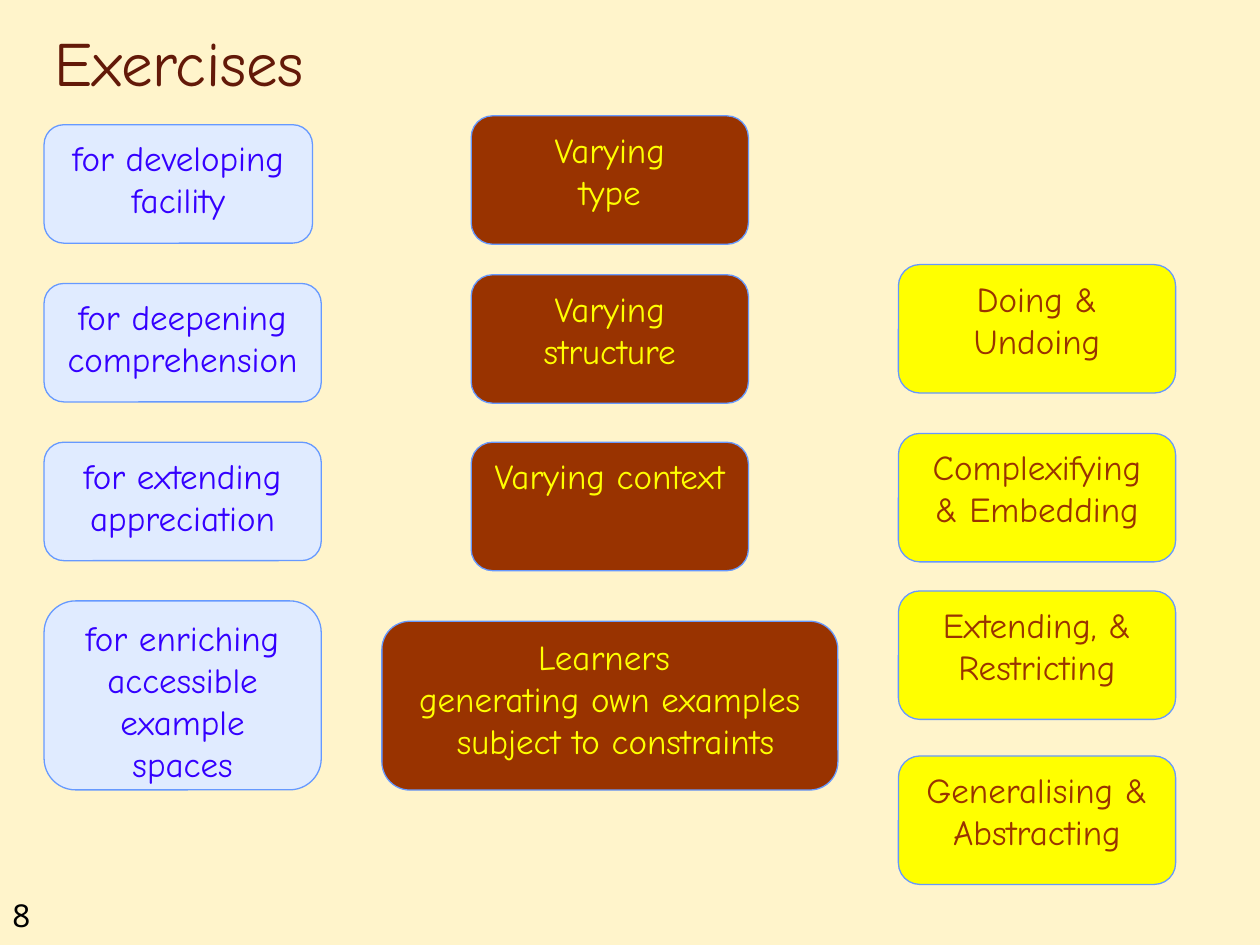
"""Build the Exercises slide: purposes, variations and themes as rounded cards."""
from typing import NamedTuple

from pptx import Presentation
from pptx.dml.color import RGBColor as RGB
from pptx.enum.shapes import MSO_SHAPE as Shape
from pptx.enum.text import MSO_ANCHOR as Anchor, PP_ALIGN as Align
from pptx.util import Pt

COLORS = {
    "background": "FFF4CB", "title": "631908", "number": "000000", "outline": "6699FF",
    "pale": "E0EBFF", "violet": "3400FF", "brown": "993300", "yellow": "FFFF00",
}
FONT = "Comic Neue"
CARD_W = 158.4


class Style(NamedTuple):
    fill: str
    ink: str


class Card(NamedTuple):
    top: float
    height: float
    paragraphs: tuple[str, ...]
    width: float = CARD_W


class Column(NamedTuple):
    center: float
    style: Style
    cards: tuple[Card, ...]


PURPOSE_H, CARD_H = 67.7, 73.4
COLUMNS = (
    Column(104.4, Style("pale", "violet"), (
        Card(71.3, PURPOSE_H, ("for developing facility",), 153.4),
        Card(162, PURPOSE_H, ("for deepening comprehension",)),
        Card(252.7, PURPOSE_H, ("for extending appreciation",)),
        Card(343.4, 108, ("for enriching accessible example spaces",)),
    )),
    Column(348.5, Style("brown", "yellow"), (
        Card(66.2, CARD_H, ("Varying\ntype",)),
        Card(157, CARD_H, ("Varying\nstructure",)),
        Card(252.7, CARD_H, ("Varying context",)),
        Card(355, 96.5, ("Learners \ngenerating own examples\n subject to constraints",), 260.6),
    )),
    Column(592.6, Style("yellow", "brown"), (
        Card(151.2, CARD_H, ("Doing & Undoing",)),
        Card(247.7, CARD_H, ("Complexifying", "& Embedding")),
        Card(337.7, CARD_H, ("Extending, & Restricting",)),
        Card(432, CARD_H, ("Generalising & Abstracting",)),
    )),
)


def color(name: str) -> RGB:
    """Return the named colour."""
    return RGB.from_string(COLORS[name])


def add_run(p, text: str, size: float, ink: str, font: str = FONT) -> None:
    """Add one formatted run to a paragraph."""
    r = p.add_run()
    r.text = text
    r.font.size, r.font.name = Pt(size), font
    r.font.color.rgb = color(ink)


def add_card(slide, left: float, card: Card, style: Style) -> None:
    """Draw a rounded card with centred text."""
    sp = slide.shapes.add_shape(Shape.ROUNDED_RECTANGLE, Pt(left), Pt(card.top),
                                Pt(card.width), Pt(card.height))
    sp.shadow.inherit = False
    sp.fill.solid()
    sp.fill.fore_color.rgb = color(style.fill)
    sp.line.color.rgb = color("outline")
    sp.line.width = Pt(0.75)
    tf = sp.text_frame
    tf.word_wrap = True
    tf.vertical_anchor = Anchor.TOP
    for i, text in enumerate(card.paragraphs):
        p = tf.add_paragraph() if i else tf.paragraphs[0]
        p.alignment = Align.CENTER
        for j, line in enumerate(text.split("\n")):
            if j:
                p.add_line_break()
            add_run(p, line, 20, style.ink)


def add_title(slide, text: str) -> None:
    """Place and format the title placeholder."""
    sp = slide.shapes.title
    sp.left, sp.top, sp.width, sp.height = Pt(24), Pt(12), Pt(612), Pt(48)
    tf = sp.text_frame
    tf.vertical_anchor = Anchor.BOTTOM
    p = tf.paragraphs[0]
    p.alignment = Align.LEFT
    add_run(p, text, 36, "title")


def add_number(slide, text: str) -> None:
    """Add the page number at the bottom left."""
    sp = slide.shapes.add_textbox(Pt(0), Pt(508.3), Pt(54), Pt(28.8))
    tf = sp.text_frame
    tf.word_wrap = True
    add_run(tf.paragraphs[0], text, 18, "number", "Noto Sans")


def main() -> None:
    """Build and save the presentation."""
    prs = Presentation()
    prs.slide_width, prs.slide_height = Pt(720), Pt(540)
    slide = prs.slides.add_slide(prs.slide_layouts[5])
    slide.background.fill.solid()
    slide.background.fill.fore_color.rgb = color("background")
    add_number(slide, "8")
    add_title(slide, "Exercises")
    for column in COLUMNS:
        left = column.center - CARD_W / 2
        for card in column.cards:
            centered = column.center - card.width / 2
            add_card(slide, centered if card.width > CARD_W else left, card, column.style)
    prs.save("out.pptx")


if __name__ == "__main__":
    main()
